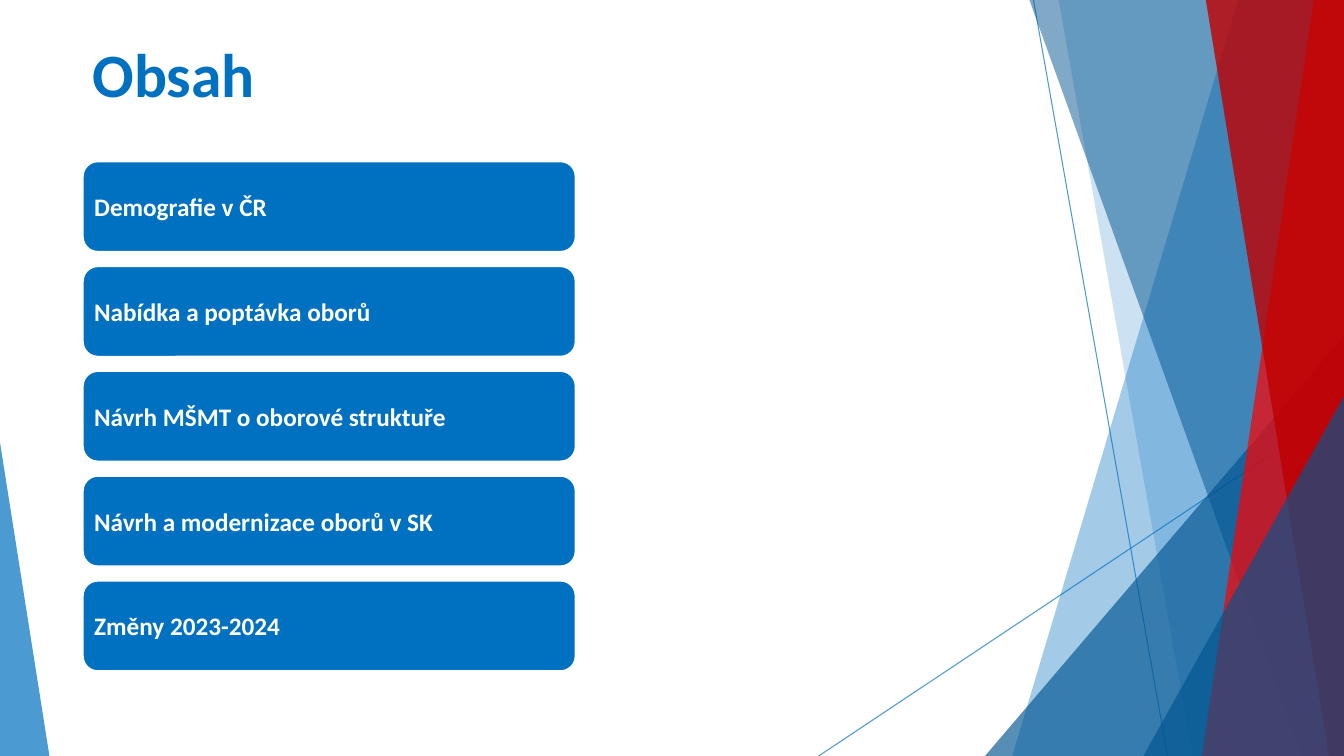
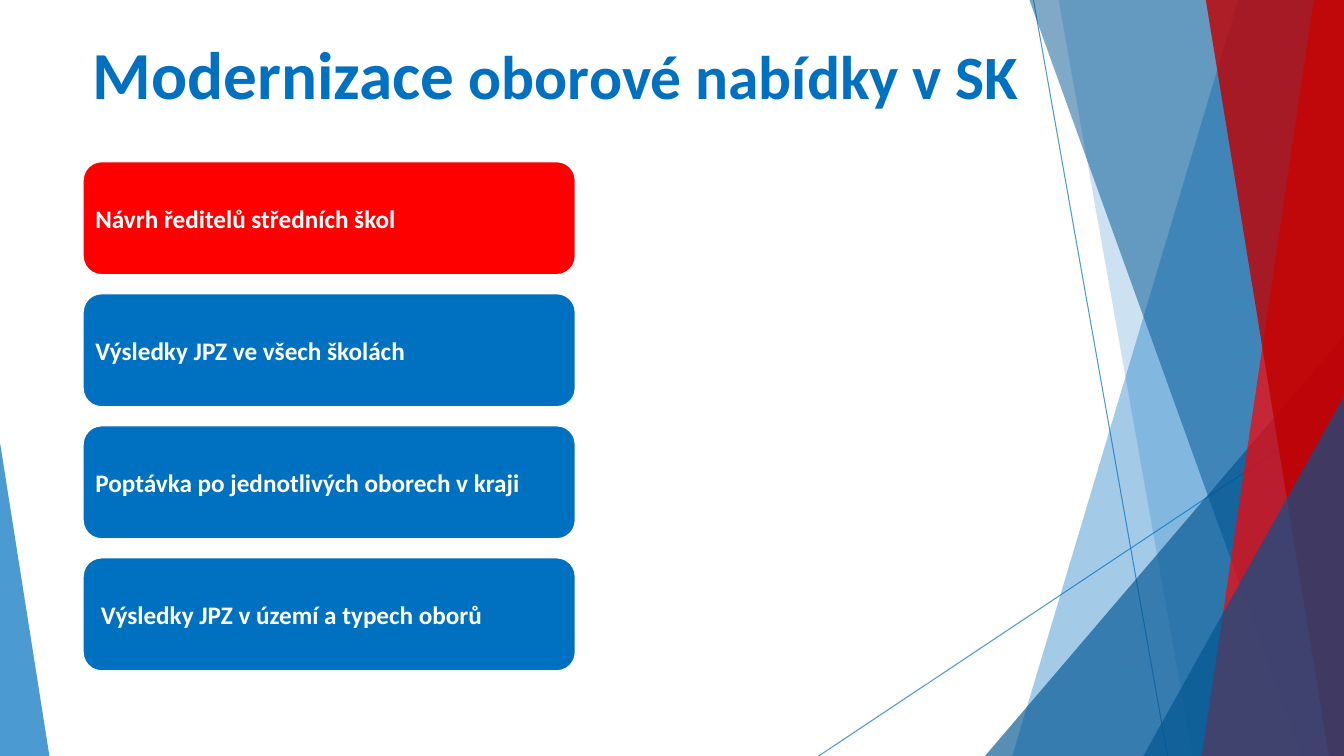
from lxml import etree
from pptx import Presentation
from pptx.dml.color import RGBColor
from pptx.enum.shapes import MSO_CONNECTOR, MSO_SHAPE
from pptx.enum.text import MSO_ANCHOR, PP_ALIGN
from pptx.oxml.ns import qn
from pptx.util import Inches, Pt

STRAIGHT = MSO_CONNECTOR.STRAIGHT
ROUNDED_RECTANGLE = MSO_SHAPE.ROUNDED_RECTANGLE
TRIANGLE = MSO_SHAPE.ISOSCELES_TRIANGLE
MIDDLE = MSO_ANCHOR.MIDDLE
LEFT = PP_ALIGN.LEFT

COLORS = {
    "blue": "0070C0",
    "navy": "005490",
    "red": "FF0000",
    "dark_red": "BF0000",
    "white": "FFFFFF",
}
FONT = "Calibri"
SLIDE_WIDTH, SLIDE_HEIGHT = 13.33, 7.5
MARGIN = 0.82
CARD_WIDTH = 4.89
CARDS_TOP, CARDS_BOTTOM = 1.6, 6.66


def color(name):
    return RGBColor.from_string(COLORS[name])


def set_opacity(shape, percent):
    for element in shape.element.spPr.iter(qn("a:srgbClr")):
        etree.SubElement(element, qn("a:alpha")).set("val", str(percent * 1000))


def paint(shape, fill, opacity):
    shape.shadow.inherit = False
    shape.fill.solid()
    shape.fill.fore_color.rgb = color(fill)
    set_opacity(shape, opacity)
    shape.line.fill.background()


def add_hairline(slide, start, end):
    line = slide.shapes.add_connector(
        STRAIGHT, *[Inches(value) for value in (*start, *end)]
    )
    line.line.color.rgb = color("blue")
    line.line.width = Pt(0.75)
    set_opacity(line, 70)
    etree.SubElement(line.element.spPr, qn("a:effectLst"))


def add_band(slide, top_left, bottom_left, fill, opacity):
    corners = [
        (top_left, 0),
        (SLIDE_WIDTH, 0),
        (SLIDE_WIDTH, SLIDE_HEIGHT),
        (bottom_left, SLIDE_HEIGHT),
    ]
    points = [(Inches(x), Inches(y)) for x, y in corners]
    builder = slide.shapes.build_freeform(*points[0])
    builder.add_line_segments(points[1:], close=True)
    paint(builder.convert_to_shape(), fill, opacity)


def add_corner(slide, left, top, width, apex, fill, opacity):
    shape = slide.shapes.add_shape(
        TRIANGLE, Inches(left), Inches(top), Inches(width), Inches(SLIDE_HEIGHT - top)
    )
    shape.adjustments[0] = apex
    paint(shape, fill, opacity)


def add_decoration(slide):
    add_hairline(slide, (10.25, 0), (11.58, SLIDE_HEIGHT))
    add_hairline(slide, (SLIDE_WIDTH, 4.03), (8.12, SLIDE_HEIGHT))
    add_band(slide, 12.28, 10.04, "blue", 36)
    add_band(slide, 10.5, 11.83, "blue", 20)
    add_corner(slide, 9.77, 3.33, 3.56, 1, "navy", 66)
    add_band(slide, 10.21, 12.91, "navy", 50)
    add_band(slide, 13.03, 11.92, "red", 70)
    add_band(slide, 11.96, 13.18, "dark_red", 80)
    add_corner(slide, 11.34, 3.93, 1.99, 1, "navy", 66)
    add_corner(slide, 0, 4.39, 0.49, 0, "blue", 70)


def style_font(font, color_name):
    font.name = FONT
    font.bold = True
    font.color.rgb = color(color_name)


def add_title(slide, runs):
    box = slide.shapes.add_textbox(
        Inches(MARGIN), Inches(0.26), Inches(10.07), Inches(0.92)
    )
    frame = box.text_frame
    frame.word_wrap = True
    frame.vertical_anchor = MIDDLE
    paragraph = frame.paragraphs[0]
    style_font(paragraph.font, "blue")
    for text, size in runs:
        run = paragraph.add_run()
        run.text = text
        run.font.size = Pt(size)


def add_card(slide, top, height, text, fill):
    card = slide.shapes.add_shape(
        ROUNDED_RECTANGLE, Inches(MARGIN), Inches(top), Inches(CARD_WIDTH), Inches(height)
    )
    card.shadow.inherit = False
    card.fill.solid()
    card.fill.fore_color.rgb = color(fill)
    card.line.color.rgb = color("white")
    card.line.width = Pt(1.5)
    frame = card.text_frame
    frame.word_wrap = True
    frame.vertical_anchor = MIDDLE
    frame.margin_left = frame.margin_right = Inches(0.07)
    frame.margin_top = frame.margin_bottom = Inches(0.07)
    paragraph = frame.paragraphs[0]
    paragraph.text = text
    paragraph.alignment = LEFT
    paragraph.font.size = Pt(18)
    style_font(paragraph.font, "white")


def add_cards(slide, height, texts, highlighted=None):
    pitch = (CARDS_BOTTOM - CARDS_TOP - height) / (len(texts) - 1)
    for index, text in enumerate(texts):
        fill = "red" if index == highlighted else "blue"
        add_card(slide, CARDS_TOP + index * pitch, height, text, fill)


def add_slide(presentation, title_runs):
    slide = presentation.slides.add_slide(presentation.slide_layouts[6])
    add_decoration(slide)
    add_title(slide, title_runs)
    return slide


def main():
    presentation = Presentation()
    presentation.slide_width = Inches(SLIDE_WIDTH)
    presentation.slide_height = Inches(SLIDE_HEIGHT)

    contents = add_slide(presentation, [("Obsah", 44)])
    add_cards(contents, 0.9, [
        "Demografie v ČR",
        "Nabídka a poptávka oborů",
        "Návrh MŠMT o oborové struktuře",
        "Návrh a modernizace oborů v SK",
        "Změny 2023-2024",
    ])

    modernization = add_slide(
        presentation, [("Modernizace", 48), (" oborové nabídky v SK", 44)]
    )
    add_cards(modernization, 1.13, [
        "Návrh ředitelů středních škol",
        "Výsledky JPZ ve všech školách",
        "Poptávka po jednotlivých oborech v kraji",
        " Výsledky JPZ v území a typech oborů",
    ], highlighted=0)

    presentation.save("out.pptx")


if __name__ == "__main__":
    main()
